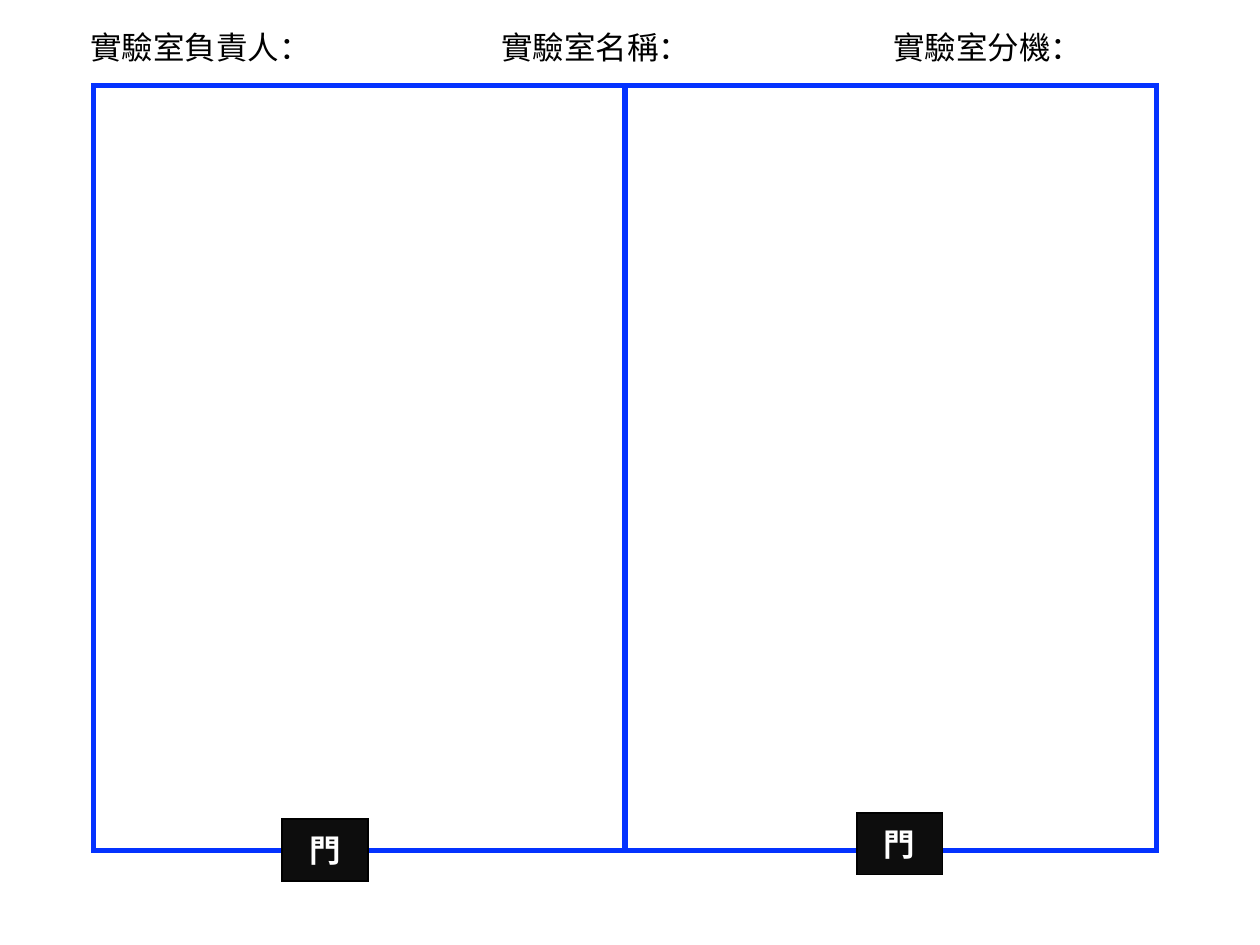
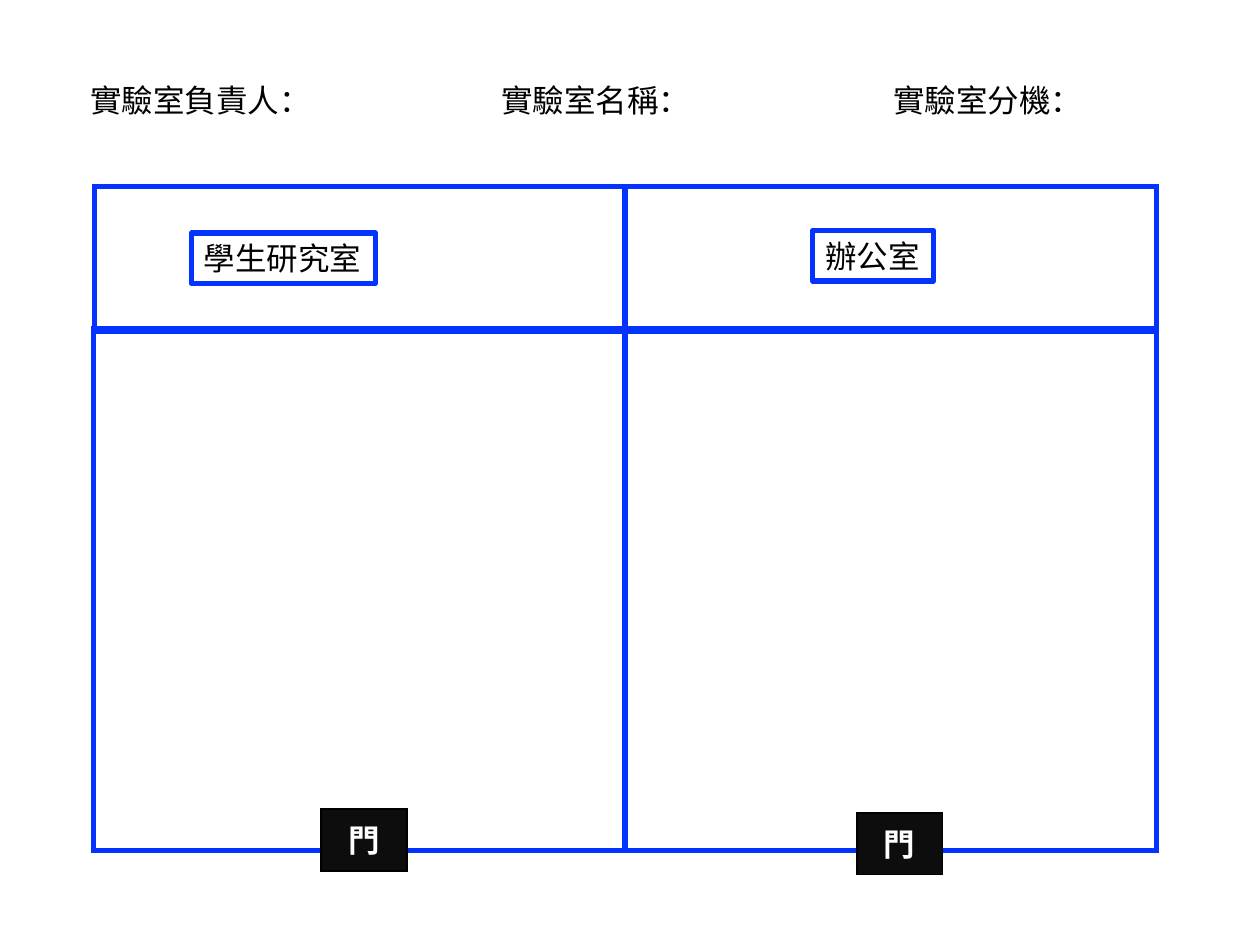
import lxml.etree
import pptx
import pptx.dml.color
import pptx.enum.shapes
import pptx.enum.text
import pptx.oxml.ns
import pptx.util

COLUMNS, ROWS = 100, 75
BLUE, BLACK, DARK, WHITE = "0432FF", "000000", "0D0D0D", "FFFFFF"
BLANK_LAYOUT = 6
TOP, BOTTOM = 0, 2

# All places below are in grid columns and rows.
LEFT, MIDDLE, RIGHT, FLOOR = 7.4, 49.6, 91.8, 67.5
DOOR_WIDTH, DOOR_HEIGHT = 6.8, 4.9
LABEL_HEIGHT = 4
HEADINGS = [("實驗室負責人：", 6.2, 19.7), ("實驗室名稱：", 38.8, 17.2),
            ("實驗室分機：", 69.9, 17.2)]


def colour(code):
    return pptx.dml.color.RGBColor.from_string(code)


class FloorPlan:
    """Holds the deck, its style and the slide being drawn."""

    font = "Calibri"
    text_size = 18
    wall_width = 3

    def __init__(self):
        self.deck = pptx.Presentation()
        self.deck.slide_width = pptx.util.Inches(10)
        self.deck.slide_height = pptx.util.Inches(7.5)

    def new_slide(self):
        layout = self.deck.slide_layouts[BLANK_LAYOUT]
        self.shapes = self.deck.slides.add_slide(layout).shapes

    def across(self, columns):
        return round(self.deck.slide_width * columns / COLUMNS)

    def down(self, rows):
        return round(self.deck.slide_height * rows / ROWS)

    def area(self, left, top, width, height):
        return self.across(left), self.down(top), self.across(width), self.down(height)

    def outline(self, shape, code, width):
        shape.line.color.rgb = colour(code)
        shape.line.width = pptx.util.Pt(width)

    def set_text(self, box, text, code, bold=False):
        box.text_frame.text = text
        para = box.text_frame.paragraphs[0]
        for span in para.runs:
            span.font.name = self.font
            span.font.size = pptx.util.Pt(self.text_size)
            span.font.bold = bold
            span.font.color.rgb = colour(code)
        return para

    def rectangle(self, left, top, width, height, line, line_width, fill=None):
        box = self.shapes.add_shape(pptx.enum.shapes.MSO_SHAPE.RECTANGLE,
                                    *self.area(left, top, width, height))
        box.shadow.inherit = False
        if fill:
            box.fill.solid()
            box.fill.fore_color.rgb = colour(fill)
        else:
            box.fill.background()
        self.outline(box, line, line_width)
        stroke = box.element.spPr.find(pptx.oxml.ns.qn("a:ln"))
        lxml.etree.SubElement(stroke, pptx.oxml.ns.qn("a:miter"), lim="800000")
        return box

    def room(self, left, top, right, bottom):
        return self.rectangle(left, top, right - left, bottom - top,
                              BLUE, self.wall_width)

    def divider(self, room, top=None):
        """Halve a room with a wall, which starts higher up if top is given."""
        start = room.top if top is None else self.down(top)
        wall = self.shapes.add_connector(
            pptx.enum.shapes.MSO_CONNECTOR.STRAIGHT,
            self.across(MIDDLE), start, self.across(MIDDLE), self.down(FLOOR))
        if top is None:
            wall.begin_connect(room, TOP)
        wall.end_connect(room, BOTTOM)
        self.outline(wall, BLUE, self.wall_width)
        lxml.etree.SubElement(wall.element.spPr, pptx.oxml.ns.qn("a:effectLst"))

    def door(self, left, top):
        box = self.rectangle(left, top, DOOR_WIDTH, DOOR_HEIGHT, BLACK, 1, DARK)
        para = self.set_text(box, "門", WHITE, bold=True)
        para.alignment = pptx.enum.text.PP_ALIGN.CENTER
        box.text_frame.vertical_anchor = pptx.enum.text.MSO_ANCHOR.MIDDLE

    def label(self, text, left, top, width, framed=False):
        box = self.shapes.add_textbox(*self.area(left, top, width, LABEL_HEIGHT))
        self.set_text(box, text, BLACK)
        box.text_frame.word_wrap = False
        box.text_frame.auto_size = pptx.enum.text.MSO_AUTO_SIZE.SHAPE_TO_FIT_TEXT
        if framed:
            self.outline(box, BLUE, self.wall_width)

    def headings(self, top):
        for text, left, width in HEADINGS:
            self.label(text, left, top, width)


def draw_open_laboratory(plan):
    plan.new_slide()
    laboratory = plan.room(LEFT, 6.8, RIGHT, FLOOR)
    plan.divider(laboratory)
    plan.headings(1.7)
    plan.door(68, 64.5)
    plan.door(22.4, 65)


def draw_laboratory_with_offices(plan):
    office_top, office_bottom = 14.8, 26.3
    plan.new_slide()
    laboratory = plan.room(LEFT, 26.1, RIGHT, FLOOR)
    plan.divider(laboratory, office_top)
    plan.door(68, 64.5)
    plan.door(25.5, 64.2)
    plan.headings(5.9)
    plan.room(MIDDLE, office_top, RIGHT, office_bottom)
    plan.room(LEFT + 0.1, office_top, MIDDLE, office_bottom)
    plan.label("辦公室", 64.5, 18.3, 9.6, framed=True)
    plan.label("學生研究室", 15.2, 18.5, 14.6, framed=True)


def main():
    plan = FloorPlan()
    draw_open_laboratory(plan)
    draw_laboratory_with_offices(plan)
    plan.deck.save("out.pptx")


if __name__ == "__main__":
    main()
